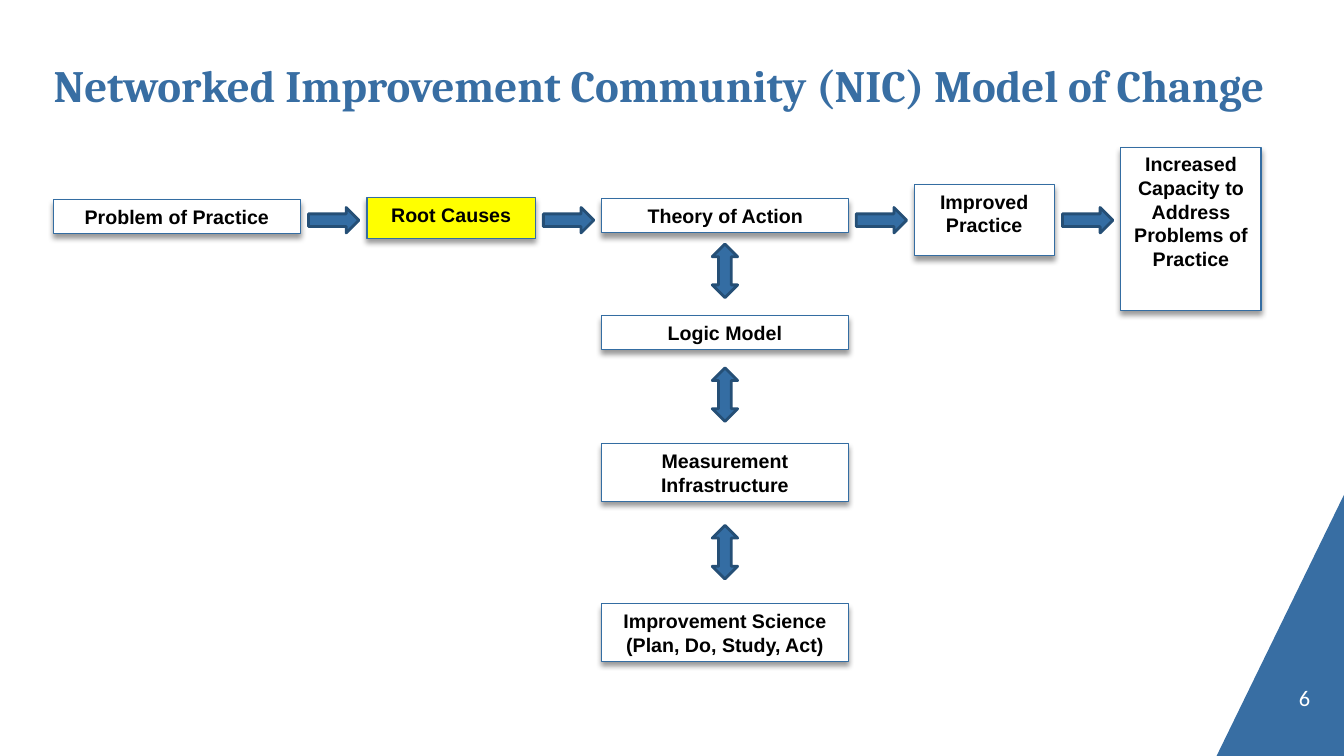
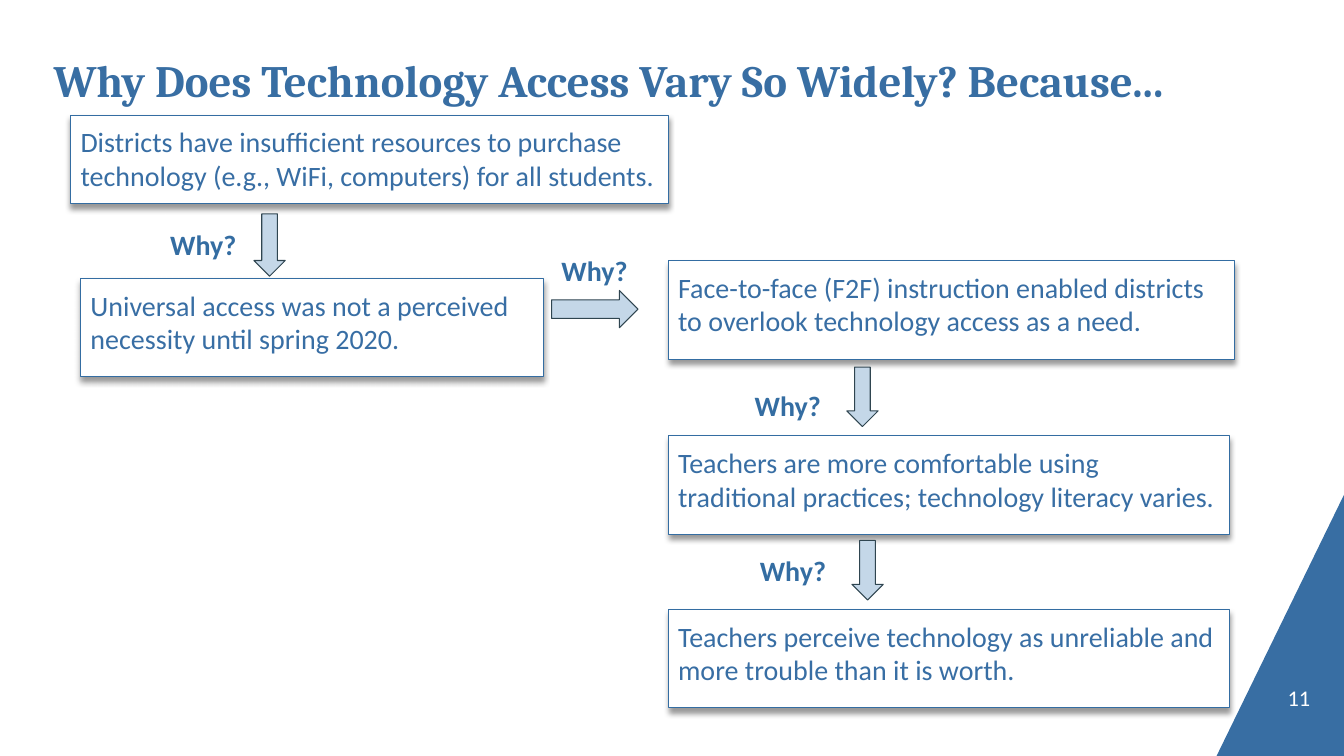
from typing import NamedTuple

from lxml.etree import SubElement
from pptx import Presentation
from pptx.dml.color import RGBColor
from pptx.enum.shapes import MSO_SHAPE
from pptx.enum.text import MSO_ANCHOR, PP_ALIGN
from pptx.oxml.ns import qn
from pptx.util import Cm, Pt

TITLE_BLUE = "386EA3"
TEXT_BLUE = "386EA4"
BORDER_BLUE = "346DA2"
ARROW_BLUE = "346DA3"
ARROW_EDGE = "254F76"
PALE_BLUE = "C4D7E8"
SLATE = "2F4550"
YELLOW = "FFFF00"
WHITE = "FFFFFF"
BLACK = "000000"


class Box(NamedTuple):
    """A rectangle in centimetres."""

    left: float
    top: float
    width: float
    height: float

    def inner(self, left, top, width, height):
        """Return a box placed relative to this one."""
        return Box(self.left + left, self.top + top, width, height)

    def lengths(self):
        """Return the four lengths for python-pptx."""
        return tuple(Cm(length) for length in self)


SLIDE = Box(0, 0, 33.87, 19.05)
CORNER = Box(30.66, 12.47, 3.21, 6.58)
PAGE_NUMBER = Box(30.51, 17.15, 2.51, 0.76)


def rgb(code):
    """Turn a hex string into a colour."""
    return RGBColor.from_string(code)


def write(holder, text, font, size, color, bold=False, align=PP_ALIGN.LEFT,
          anchor=MSO_ANCHOR.TOP, margins=(0, 0)):
    """Write one wrapped paragraph; margins are side and top/bottom in cm."""
    frame = holder.text_frame
    frame.word_wrap = True
    frame.vertical_anchor = anchor
    frame.margin_left = frame.margin_right = Cm(margins[0])
    frame.margin_top = frame.margin_bottom = Cm(margins[1])
    paragraph = frame.paragraphs[0]
    paragraph.alignment = align
    run = paragraph.add_run()
    run.text = text
    run.font.name = font
    run.font.size = Pt(size)
    run.font.bold = bold
    run.font.color.rgb = rgb(color)


def add_label(slide, box, text, *style, **options):
    """Add text without a frame."""
    write(slide.shapes.add_textbox(*box.lengths()), text, *style, **options)


def add_preset(slide, preset, box, fill, line, line_width):
    """Add a flat preset shape."""
    shape = slide.shapes.add_shape(preset, *box.lengths())
    shape.shadow.inherit = False
    shape.fill.solid()
    shape.fill.fore_color.rgb = rgb(fill)
    shape.line.color.rgb = rgb(line)
    shape.line.width = Pt(line_width)
    return shape


def add_card(slide, box, fill=WHITE):
    """Add a thin-bordered rectangle with a soft shadow below it."""
    card = add_preset(slide, MSO_SHAPE.RECTANGLE, box, fill, BORDER_BLUE, 0.75)
    effects = card._element.spPr.find(qn("a:effectLst"))
    shadow = SubElement(effects, qn("a:outerShdw"), blurRad=str(Pt(4)),
                        dist=str(Pt(3)), dir="5400000", rotWithShape="0")
    color = SubElement(shadow, qn("a:srgbClr"), val=BLACK)
    SubElement(color, qn("a:alpha"), val="40000")
    return card


def add_base(deck, title, title_box, number):
    """Add a slide with its title, corner triangle and page number."""
    slide = deck.slides.add_slide(deck.slide_layouts[6])
    left, top, width, height = CORNER.lengths()
    builder = slide.shapes.build_freeform(left + width, top)
    builder.add_line_segments([(left, top + height), (left + width, top + height)])
    corner = builder.convert_to_shape()
    corner.shadow.inherit = False
    corner.fill.solid()
    corner.fill.fore_color.rgb = rgb(TITLE_BLUE)
    corner.line.fill.background()
    add_label(slide, title_box, title, "Cambria", 32, TITLE_BLUE, bold=True,
              anchor=MSO_ANCHOR.MIDDLE)
    add_label(slide, PAGE_NUMBER, str(number), "Calibri", 16, WHITE,
              align=PP_ALIGN.RIGHT, anchor=MSO_ANCHOR.BOTTOM)
    return slide


def add_stage(slide, box, text, fill=WHITE, anchor=MSO_ANCHOR.TOP):
    """Add one stage of the model of change."""
    write(add_card(slide, box, fill), text, "Arial", 14, BLACK, bold=True,
          align=PP_ALIGN.CENTER, anchor=anchor, margins=(0.25, 0.13))


def add_change_row(slide, region):
    """Add the stages from problem to capacity, an arrow centred in each gap."""
    stages = [
        ("Problem of Practice", 0, 1.32, 6.22, 0.86, WHITE),
        ("Root Causes", 7.9, 1.27, 4.24, 1.02, YELLOW),
        ("Theory of Action", 13.82, 1.3, 6.22, 0.86, WHITE),
        ("Improved Practice", 21.69, 0.94, 3.53, 1.8, WHITE),
        ("Increased Capacity to Address Problems of Practice",
         26.9, 0, 3.53, 4.11, WHITE),
    ]
    for text, left, top, width, height, fill in stages:
        add_stage(slide, region.inner(left, top, width, height), text, fill)
    for before, after in zip(stages, stages[1:]):
        middle = (before[1] + before[3] + after[1]) / 2
        add_preset(slide, MSO_SHAPE.RIGHT_ARROW,
                   region.inner(middle - 0.635, 1.52, 1.27, 0.64),
                   ARROW_BLUE, ARROW_EDGE, 2)


def add_support_stack(slide, region):
    """Add the supports below the theory, each under a two-way arrow."""
    supports = [
        ("Logic Model", 0, 1.8, 0.86),
        ("Measurement Infrastructure", 3.12, 5.03, 1.45),
        ("Improvement Science (Plan, Do, Study, Act)", 7.09, 9.07, 1.45),
    ]
    for text, arrow_top, top, height in supports:
        add_preset(slide, MSO_SHAPE.UP_DOWN_ARROW,
                   region.inner((region.width - 0.64) / 2, arrow_top, 0.64, 1.35),
                   ARROW_BLUE, ARROW_EDGE, 2)
        add_stage(slide, region.inner(0, top, region.width, height), text,
                  anchor=MSO_ANCHOR.MIDDLE)


def add_reasons(slide, region):
    """Add the chain of reasons."""
    reasons = [
        ("Districts have insufficient resources to purchase technology "
         "(e.g., WiFi, computers) for all students.", 0, 0, 15.06, 2.24),
        ("Universal access was not a perceived necessity until spring 2020.",
         0.25, 4.11, 11.66, 2.49),
        ("Face-to-face (F2F) instruction enabled districts to overlook "
         "technology access as a need.", 15.06, 3.66, 14.27, 2.49),
        ("Teachers are more comfortable using traditional practices; "
         "technology literacy varies.", 15.06, 8.08, 14.15, 2.49),
        ("Teachers perceive technology as unreliable and more trouble than "
         "it is worth.", 15.06, 12.45, 14.15, 2.49),
    ]
    for text, *place in reasons:
        write(add_card(slide, region.inner(*place)), text, "Calibri", 20,
              TEXT_BLUE, margins=(0.25, 0.25))


def add_questions(slide, region):
    """Add the arrows between the reasons, each with its question."""
    down, right = MSO_SHAPE.DOWN_ARROW, MSO_SHAPE.RIGHT_ARROW
    questions = [
        (down, (4.62, 2.49, 0.79, 1.57), (2.26, 2.59)),
        (right, (12.12, 4.42, 2.18, 0.94), (12.12, 3.23)),
        (down, (19.56, 6.35, 0.79, 1.5), (16.99, 6.63)),
        (down, (19.69, 10.72, 0.79, 1.5), (17.12, 10.8)),
    ]
    for arrow, arrow_place, label_place in questions:
        add_preset(slide, arrow, region.inner(*arrow_place), PALE_BLUE, SLATE, 0.75)
        add_label(slide, region.inner(*label_place, 2.36, 0.94), "Why?",
                  "Calibri", 20, BORDER_BLUE, bold=True, margins=(0.25, 0.25))


def main():
    """Build and save the two slides."""
    deck = Presentation()
    deck.slide_width, deck.slide_height = SLIDE.lengths()[2:]

    model = add_base(deck, "Networked Improvement Community (NIC) Model of Change",
                     Box(1.35, 1.02, 31.67, 2.21), 6)
    add_change_row(model, Box(1.35, 3.71, 30.43, 4.11))
    add_support_stack(model, Box(15.16, 6.15, 6.22, 10.52))

    whys = add_base(deck, "Why Does Technology Access Vary So Widely? Because...",
                    Box(1.35, 0.94, 30.89, 2.11), 11)
    chain = Box(1.78, 2.9, 29.33, 14.94)
    add_reasons(whys, chain)
    add_questions(whys, chain)

    deck.save("out.pptx")


if __name__ == "__main__":
    main()
